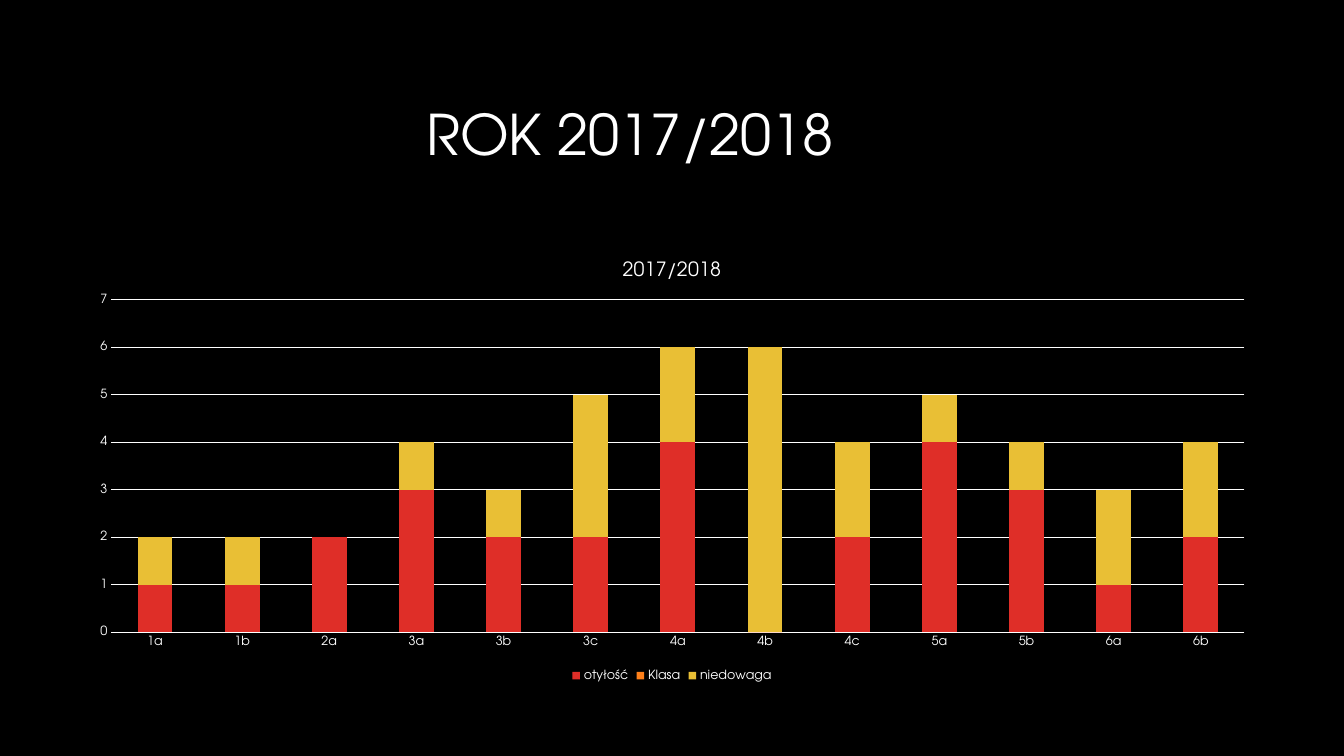
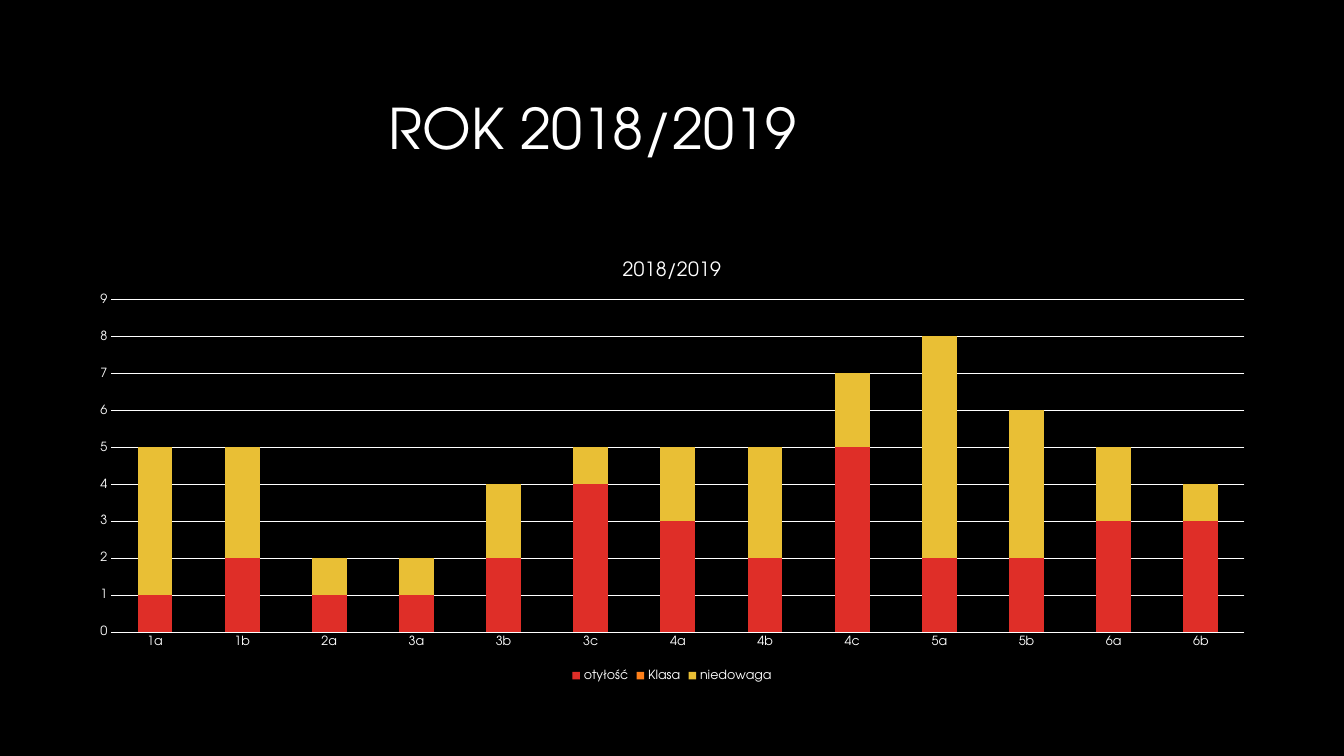
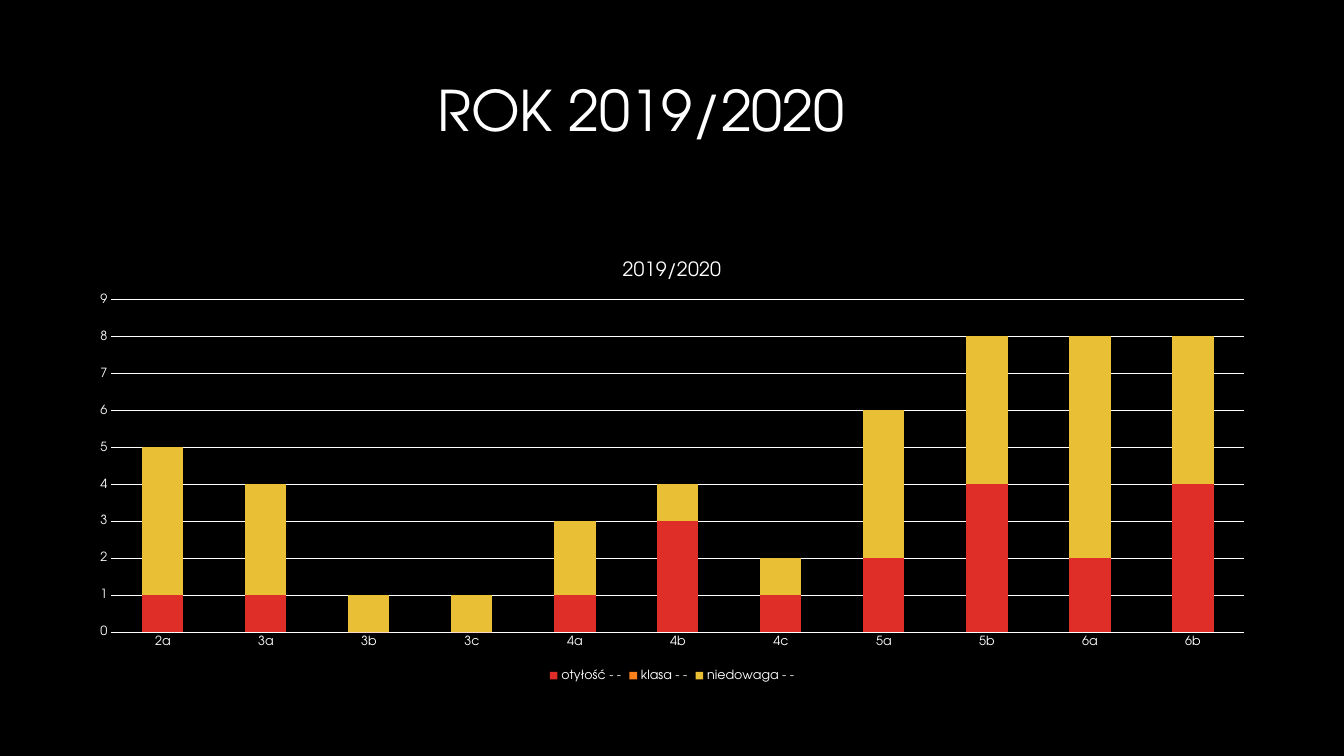
from lxml.etree import SubElement as Sub
from pptx import Presentation
from pptx.chart.data import CategoryChartData as Data
from pptx.dml.color import RGBColor as Rgb
from pptx.enum.chart import XL_CHART_TYPE as Kind, XL_LEGEND_POSITION as Side, XL_TICK_MARK as Tick
from pptx.enum.text import MSO_ANCHOR as Anchor, PP_ALIGN as Align
from pptx.oxml.ns import qn
from pptx.util import Pt

PX = 9144
FACE = "TeX Gyre Adventor"
INK = {"back": "000000", "text": "FFFFFF", "over": "DF2E28", "class": "FE801A", "under": "E9BF35"}
BARS = ("over", "class", "under")
CHART = (75, 240, 1183, 440)
PLOT = {"x": 0.03, "y": 0.13, "w": 0.95, "h": 0.75}
GRADES = ["1a", "1b", "2a", "3a", "3b", "3c", "4a", "4b", "4c", "5a", "5b", "6a", "6b"]
LATER = GRADES[2:]
NAMES = ["otyłość", "Klasa", "niedowaga"]
DASHED = ["otyłość - -", "klasa - -", "niedowaga - -"]
YEARS = [
    ("2017/2018", (154, 66, 942, 141), 7, GRADES, NAMES,
     [1, 1, 2, 3, 2, 2, 4, 0, 2, 4, 3, 1, 2], [1, 1, 0, 1, 1, 3, 2, 6, 2, 1, 1, 2, 2]),
    ("2018/2019", (117, 60, 942, 141), 9, GRADES, NAMES,
     [1, 2, 1, 1, 2, 4, 3, 2, 5, 2, 2, 3, 3], [4, 3, 1, 1, 2, 1, 2, 3, 2, 6, 4, 2, 1]),
    ("2019/2020", (165, 42, 942, 141), 9, LATER, DASHED,
     [1, 1, 0, 0, 1, 3, 1, 2, 4, 2, 4], [4, 3, 1, 1, 2, 1, 1, 4, 4, 6, 4]),
]


def emu(box):
    """Turn px lengths into EMU."""
    return [n * PX for n in box]


def put(thing, **vals):
    """Set each named attribute."""
    for key, val in vals.items():
        setattr(thing, key, val)


def style(font, size):
    """Apply the shared face and colour."""
    put(font, name=FACE, size=Pt(size), bold=False)
    font.color.rgb = Rgb.from_string(INK["text"])


def paint(part, key):
    """Fill a bar or other solid part."""
    part.fill.solid()
    part.fill.fore_color.rgb = Rgb.from_string(INK[key])


def rule(line):
    """Draw a thin white line."""
    line.width = Pt(0.75)
    line.color.rgb = Rgb.from_string(INK["text"])


def head(slide, text, box):
    """Place the slide title."""
    title = slide.shapes.title
    put(title, **dict(zip(("left", "top", "width", "height"), emu(box))))
    put(title.text_frame, text=text, word_wrap=True, vertical_anchor=Anchor.MIDDLE)
    para = title.text_frame.paragraphs[0]
    put(para, alignment=Align.CENTER, line_spacing=0.9)
    style(para.runs[0].font, 40)


def fix(chart):
    """Pin the inner plot area inside the chart."""
    area = chart._chartSpace.chart.plotArea
    for old in area.findall(qn("c:layout")):
        area.remove(old)
    lay = area.makeelement(qn("c:layout"))
    area.insert(0, lay)
    man = Sub(lay, qn("c:manualLayout"))
    marks = {"layoutTarget": "inner", "xMode": "edge", "yMode": "edge", **PLOT}
    for key, val in marks.items():
        Sub(man, qn("c:" + key)).set("val", str(val))


def graph(slide, box, year, top, cats, names, rows):
    """Place the stacked column chart of one year."""
    data = Data()
    data.categories = cats
    for name, row in zip(names, rows):
        data.add_series(name, row)
    chart = slide.shapes.add_chart(Kind.COLUMN_STACKED, *emu(box), data).chart
    style(chart.font, 10)
    frame = chart.chart_title.text_frame
    frame.text = year
    style(frame.paragraphs[0].runs[0].font, 14)
    chart.chart_title.include_in_layout = False
    chart.has_legend = True
    put(chart.legend, position=Side.BOTTOM, include_in_layout=False)
    style(chart.legend.font, 9)
    plot = chart.plots[0]
    put(plot, gap_width=150, overlap=100, vary_by_categories=False)
    for bar, key in zip(plot.series, BARS):
        paint(bar.format, key)
    for axis in (chart.category_axis, chart.value_axis):
        put(axis, major_tick_mark=Tick.NONE, minor_tick_mark=Tick.NONE)
        style(axis.tick_labels.font, 9)
    rule(chart.category_axis.format.line)
    axis = chart.value_axis
    put(axis, minimum_scale=0, maximum_scale=top, major_unit=1, has_major_gridlines=True)
    axis.format.line.fill.background()
    rule(axis.major_gridlines.format.line)
    fix(chart)


def main():
    """Build one slide for each school year."""
    deck = Presentation()
    put(deck, slide_width=1333 * PX, slide_height=750 * PX)
    paint(deck.slide_master.background, "back")
    for year, box, top, cats, names, over, under in YEARS:
        slide = deck.slides.add_slide(deck.slide_layouts[5])
        head(slide, "ROK " + year, box)
        graph(slide, CHART, year, top, cats, names, [over, [0] * len(cats), under])
    deck.save("out.pptx")


if __name__ == "__main__":
    main()
